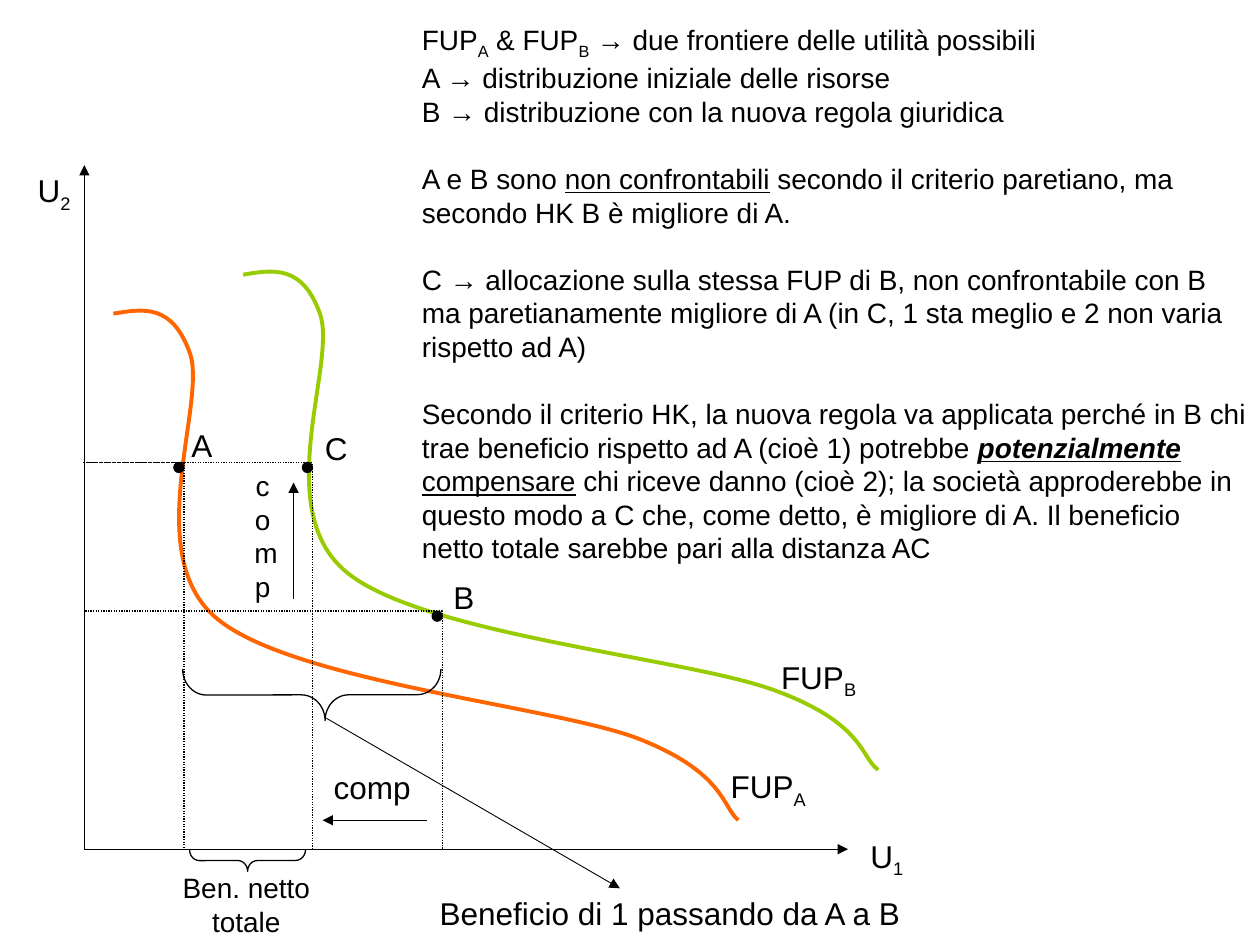
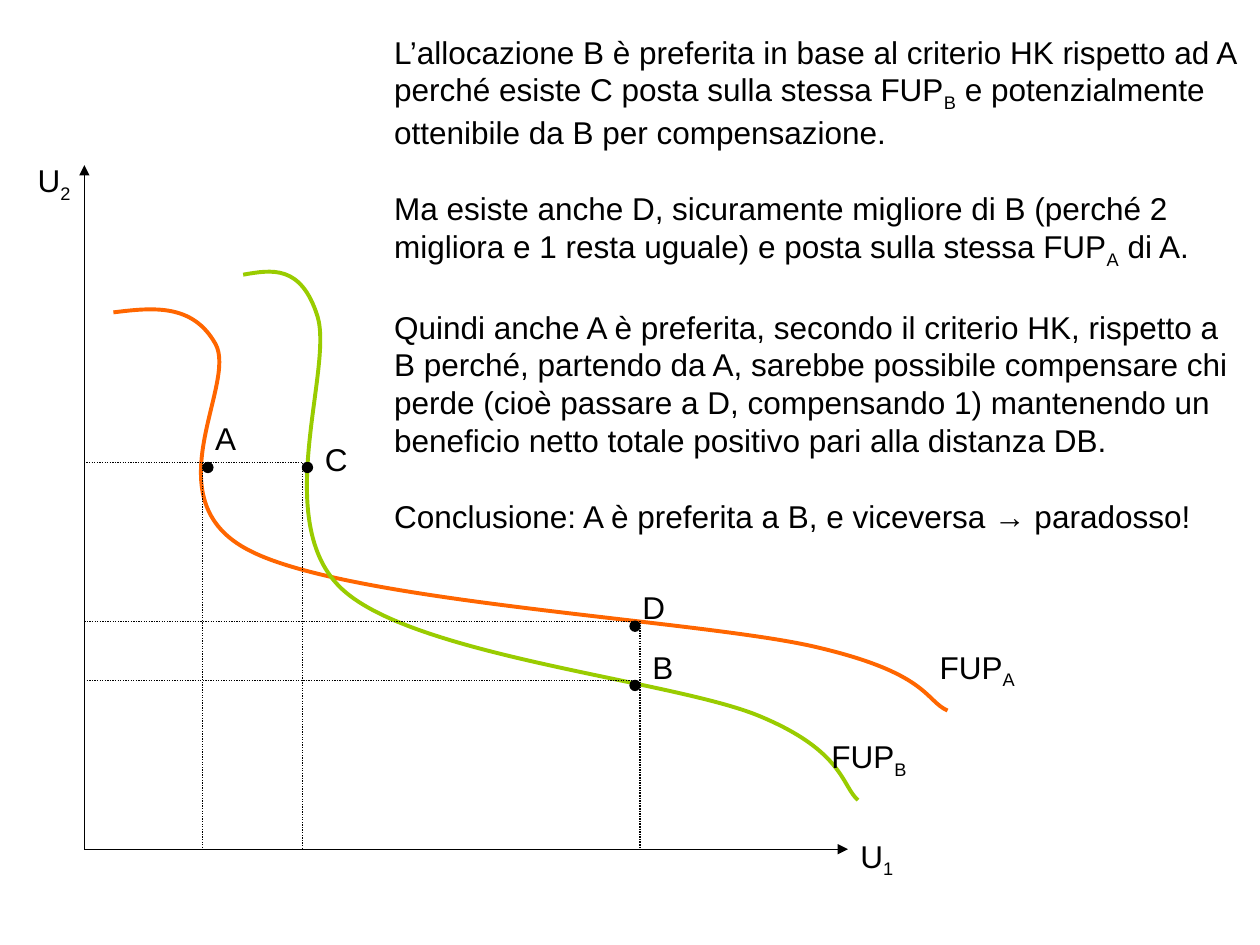
"""Build two slides on utility possibility frontiers and the HK criterion."""
from lxml.etree import SubElement
from pptx import Presentation
from pptx.dml.color import RGBColor
from pptx.enum.dml import MSO_LINE
from pptx.enum.shapes import MSO_CONNECTOR, MSO_SHAPE as SHAPE
from pptx.enum.text import MSO_AUTO_SIZE, PP_ALIGN
from pptx.oxml.ns import qn
from pptx.util import Inches, Pt

COLORS = {"ink": "000000", "fup_a": "FF6600", "fup_b": "99CC00"}
FONT = "Arial"
SUB_A, SUB_B, SUB_1, SUB_2 = [(mark, {"sub": True}) for mark in "AB12"]
ORIGIN = (0.67, 6.74)
U2_TIP, U1_TIP = (0.67, 1.31), (6.73, 6.74)
DOT = 0.08
LABEL_HEIGHT = 0.4
BLOCK_GAP = 1.2

COMPARISON = {
    "curves": {
        "fup_a": [(0.9, 2.49), (1.14, 2.45), (1.37, 2.41), (1.51, 2.81), (1.64, 3.21),
                  (1.12, 4.39), (1.71, 4.9), (2.3, 5.41), (4.37, 5.6), (5.06, 5.86),
                  (5.75, 6.13), (5.73, 6.4), (5.86, 6.51)],
        "fup_b": [(1.93, 2.18), (2.17, 2.14), (2.4, 2.1), (2.54, 2.49), (2.68, 2.88),
                  (2.14, 4.04), (2.75, 4.54), (3.35, 5.04), (5.45, 5.22), (6.15, 5.48),
                  (6.86, 5.74), (6.83, 6.01), (6.97, 6.11)],
    },
    "guide_corners": [(2.48, 3.67), (3.51, 4.85)],
    "guide_lines": [((1.46, 3.67), (1.46, 6.74)), ((0.66, 3.67), (1.46, 3.67))],
    "dots": [(1.38, 3.67), (2.4, 3.67), (3.43, 4.85)],
    "labels": [
        (["A"], 1.42, 3.33, 0.37, True),
        (["C"], 2.48, 3.36, 0.38, True),
        (["B"], 3.5, 4.54, 0.37, False),
        (["U", SUB_2], 0.2, 1.31, 0.47, False),
        (["U", SUB_1], 6.81, 6.59, 0.47, True),
        (["FUP", SUB_A], 5.7, 6.04, 0.81, False),
        (["FUP", SUB_B], 6.1, 5.17, 0.81, True),
        (["comp"], 2.55, 6.05, 0.81, False),
        (["Beneficio di 1 passando da A a B"], 3.39, 7.05, 3.89, False),
    ],
    "explanation_at": (3.25, 0.13, 6.75, 4.41),
    "explanation_size": 16,
    "explanation": [
        [["FUP", SUB_A, " & FUP", SUB_B, " → due frontiere delle utilità possibili"],
         ["A → distribuzione iniziale delle risorse"],
         ["B → distribuzione con la nuova regola giuridica"]],
        [["A e B sono ", ("non confrontabili", {"underline": True}),
          " secondo il criterio paretiano, ma secondo HK B è migliore di A."]],
        [["C → allocazione sulla stessa FUP di B, non confrontabile con B ma paretianamente "
          "migliore di A (in C, 1 sta meglio e 2 non varia rispetto ad A)"]],
        [["Secondo il criterio HK, la nuova regola va applicata perché in B chi trae beneficio "
          "rispetto ad A (cioè 1) potrebbe ",
          ("potenzialmente", {"bold": True, "italic": True, "underline": True}),
          (" compensare", {"underline": True}),
          " chi riceve danno (cioè 2); la società approderebbe in questo modo a C che, come "
          "detto, è migliore di A. Il beneficio netto totale sarebbe pari alla distanza AC"]],
    ],
}

PARADOX = {
    "curves": {
        "fup_a": [(0.9, 2.48), (1.22, 2.44), (1.53, 2.41), (1.71, 2.73), (1.89, 3.05),
                  (1.19, 3.97), (1.98, 4.37), (2.77, 4.78), (5.52, 4.92), (6.45, 5.13),
                  (7.37, 5.34), (7.34, 5.56), (7.52, 5.64)],
        "fup_b": [(1.93, 2.18), (2.16, 2.14), (2.39, 2.1), (2.52, 2.51), (2.65, 2.93),
                  (2.14, 4.15), (2.72, 4.68), (3.3, 5.21), (5.34, 5.4), (6.02, 5.68),
                  (6.7, 5.96), (6.68, 6.24), (6.81, 6.35)],
    },
    "guide_corners": [(2.4, 3.67), (5.08, 5.4), (5.08, 4.93)],
    "guide_lines": [((1.61, 3.67), (1.61, 6.74))],
    "dots": [(1.61, 3.67), (2.4, 3.67), (5, 5.4), (5, 4.93)],
    "labels": [
        (["A"], 1.61, 3.28, 0.37, True),
        (["C"], 2.48, 3.44, 0.38, True),
        (["B"], 5.08, 5.09, 0.37, False),
        (["D"], 5, 4.62, 0.38, True),
        (["U", SUB_2], 0.2, 1.23, 0.47, False),
        (["U", SUB_1], 6.73, 6.59, 0.47, True),
        (["FUP", SUB_A], 7.36, 5.09, 0.81, False),
        (["FUP", SUB_B], 6.5, 5.8, 0.81, True),
    ],
    "explanation_at": (3.03, 0.21, 6.97, 4.31),
    "explanation_size": 18,
    "explanation": [
        [["L’allocazione B è preferita in base al criterio HK rispetto ad A perché esiste C "
          "posta sulla stessa FUP", SUB_B,
          " e potenzialmente ottenibile da B per compensazione."]],
        [["Ma esiste anche D, sicuramente migliore di B (perché 2 migliora e 1 resta uguale) "
          "e posta sulla stessa FUP", SUB_A, " di A."]],
        [["Quindi anche A è preferita, secondo il criterio HK, rispetto a B perché, partendo "
          "da A, sarebbe possibile compensare chi perde (cioè passare a D, compensando 1) "
          "mantenendo un beneficio netto totale positivo pari alla distanza DB."]],
        [["Conclusione: A è preferita a B, e viceversa → paradosso!"]],
    ],
}

ARROWS = [((3.39, 6.51), (2.56, 6.51), 0.75), ((2.33, 4.75), (2.33, 3.83), 0.75),
          ((2.59, 5.7), (4.92, 7.05), 0.5)]
BRACES = [((1.88, 6.37, 0.17, 0.92), 0.5), ((2.27, 4.49, 0.41, 2.05), 0.449)]
CENTERED_NOTES = [([[["comp"]]], (1.92, 3.67, 0.33, 1.17)),
                  ([[["Ben. netto"], ["totale"]]], (1.33, 6.86, 1.25, 0.64))]


def rgb(name):
    return RGBColor.from_string(COLORS[name])


def add_text(slide, blocks, at, size=18, wrap=True, align=PP_ALIGN.LEFT):
    frame = slide.shapes.add_textbox(*map(Inches, at)).text_frame
    frame.word_wrap = wrap
    frame.auto_size = MSO_AUTO_SIZE.SHAPE_TO_FIT_TEXT
    lines = [(runs, block > 0 and row == 0)
             for block, rows in enumerate(blocks) for row, runs in enumerate(rows)]
    for index, (runs, opens_block) in enumerate(lines):
        paragraph = frame.add_paragraph() if index else frame.paragraphs[0]
        paragraph.alignment = align
        if opens_block:
            paragraph.space_before = Pt(size * BLOCK_GAP)
        for part in runs:
            words, style = (part, {}) if isinstance(part, str) else part
            run = paragraph.add_run()
            run.text = words
            run.font.name, run.font.size = FONT, Pt(size)
            run.font.color.rgb = rgb("ink")
            run.font.bold = style.get("bold")
            run.font.italic = style.get("italic")
            run.font.underline = style.get("underline")
            if style.get("sub"):
                run._r.get_or_add_rPr().set("baseline", "-25000")


def style_line(line, color="ink", width=0.75, dotted=False):
    line.color.rgb = rgb(color)
    line.width = Pt(width)
    if dotted:
        line.dash_style = MSO_LINE.ROUND_DOT


def add_line(slide, start, end, width=0.75, dotted=False, arrow=False):
    connector = slide.shapes.add_connector(MSO_CONNECTOR.STRAIGHT, *map(Inches, start + end))
    style_line(connector.line, width=width, dotted=dotted)
    properties = connector._element.spPr
    if arrow:
        SubElement(properties.find(qn("a:ln")), qn("a:tailEnd"), type="triangle")
    SubElement(properties, qn("a:effectLst"))


def add_figure(slide, kind, at, filled=False, dotted=False):
    figure = slide.shapes.add_shape(kind, *map(Inches, at))
    figure.shadow.inherit = False
    if filled:
        figure.fill.solid()
        figure.fill.fore_color.rgb = rgb("ink")
    else:
        figure.fill.background()
    style_line(figure.line, dotted=dotted)
    return figure


def add_curve(slide, controls, color):
    start, *others = [tuple(map(Inches, point)) for point in controls]
    builder = slide.shapes.build_freeform(*start)
    builder.add_line_segments(others, close=False)
    frontier = builder.convert_to_shape()
    frontier.shadow.inherit = False
    frontier.fill.background()
    style_line(frontier.line, color, 2.25)
    outline = next(frontier._element.iter(qn("a:path")))
    segments = outline.findall(qn("a:lnTo"))
    for first in range(0, len(segments), 3):
        bezier = SubElement(outline, qn("a:cubicBezTo"))
        for segment in segments[first:first + 3]:
            bezier.append(segment[0])
            outline.remove(segment)


def add_diagram(deck, content):
    slide = deck.slides.add_slide(deck.slide_layouts[6])
    for tip in (U2_TIP, U1_TIP):
        add_line(slide, ORIGIN, tip, arrow=True)
    for color, controls in content["curves"].items():
        add_curve(slide, controls, color)
    left, bottom = ORIGIN
    for right, top in content["guide_corners"]:
        add_figure(slide, SHAPE.RECTANGLE, (left, top, right - left, bottom - top), dotted=True)
    for start, end in content["guide_lines"]:
        add_line(slide, start, end, dotted=True)
    for x, y in content["dots"]:
        add_figure(slide, SHAPE.OVAL, (x, y, DOT, DOT), filled=True)
    for runs, x, y, width, wrap in content["labels"]:
        add_text(slide, [[runs]], (x, y, width, LABEL_HEIGHT), wrap=wrap)
    add_text(slide, content["explanation"], content["explanation_at"],
             size=content["explanation_size"])
    return slide


def add_compensation(slide):
    for start, end, width in ARROWS:
        add_line(slide, start, end, width, arrow=True)
    for at, tip in BRACES:
        brace = add_figure(slide, SHAPE.RIGHT_BRACE, at)
        brace.rotation = 89.9
        brace.adjustments[0], brace.adjustments[1] = 0.458, tip
    for blocks, at in CENTERED_NOTES:
        add_text(slide, blocks, at, size=16, align=PP_ALIGN.CENTER)


def main():
    deck = Presentation()
    deck.slide_width, deck.slide_height = Inches(10), Inches(7.5)
    add_compensation(add_diagram(deck, COMPARISON))
    add_diagram(deck, PARADOX)
    deck.save("out.pptx")


if __name__ == "__main__":
    main()
